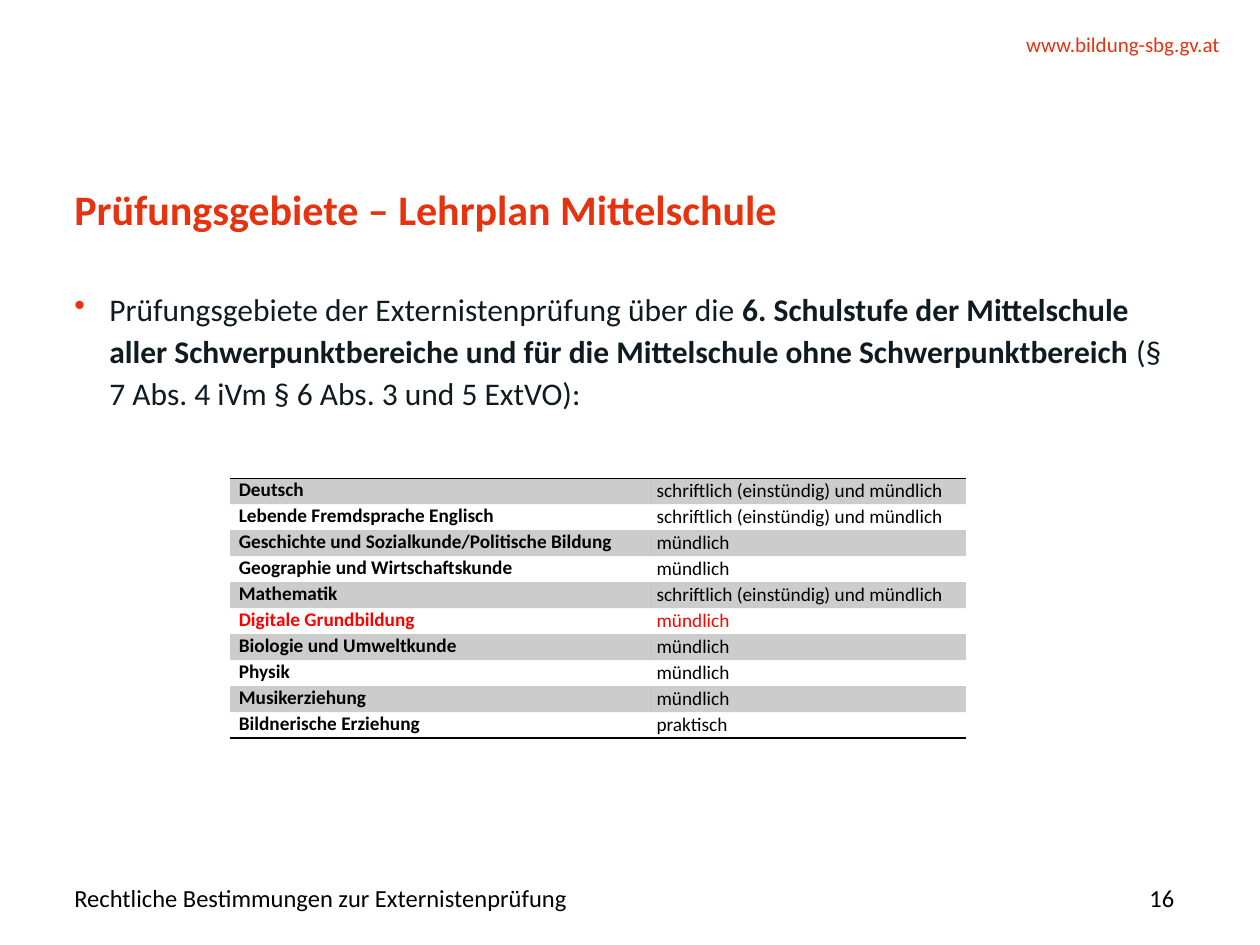
"""Build the slide listing the examination subjects of the Mittelschule curriculum."""
from dataclasses import dataclass
from typing import Any

import lxml.etree
import pptx
import pptx.dml.color
import pptx.enum.text
import pptx.oxml.ns
import pptx.util

Pt = pptx.util.Pt
Align = pptx.enum.text.PP_ALIGN
Anchor = pptx.enum.text.MSO_ANCHOR

COLOURS = {"accent": "E6320F", "body": "0F1B20", "black": "000000", "highlight": "FF0000"}
FONT = "Calibri"
LEFT = 42.5
CONTENT_WIDTH = 628.5
INDENT = 20
ROW_HEIGHT = 14.86
COLUMN_WIDTHS = (240.5, 180)
CELL_MARGINS = (
    {"margin_left": Pt(5), "margin_top": 0, "margin_right": Pt(5), "margin_bottom": 0},
    {"margin_left": Pt(3.2), "margin_top": Pt(0.72), "margin_right": Pt(0.72), "margin_bottom": Pt(0.72)},
)
NO_TABLE_STYLE = "{2D5ABB26-0587-4C30-8999-92F81FD0307C}"


@dataclass(frozen=True)
class Span:
    text: str
    bold: bool = False


@dataclass(frozen=True)
class TextBlock:
    spans: tuple[Span, ...]
    place: tuple[float, float, float, float]
    size: float
    colour: str
    align: Any = Align.LEFT
    anchor: Any = Anchor.TOP
    line_pitch: float | None = None
    space_after: float = 0
    bullet: bool = False


@dataclass(frozen=True)
class Subject:
    name: str
    mode: str
    colour: str = "black"


BOTH = "schriftlich (einstündig) und mündlich"
ORAL = "mündlich"

BLOCKS = (
    TextBlock((Span("www.bildung-sbg.gv.at"),), (523.5, 18, 173.5, 14.5), 12, "accent", Align.RIGHT),
    TextBlock((Span("Prüfungsgebiete – Lehrplan Mittelschule", True),),
              (LEFT, 103.7, CONTENT_WIDTH, 65.5), 24, "accent", line_pitch=30),
    TextBlock(
        (
            Span("Prüfungsgebiete der Externistenprüfung über die "),
            Span("6. Schulstufe der Mittelschule aller Schwerpunktbereiche und für die "
                 "Mittelschule ohne Schwerpunktbereich ", True),
            Span("(§ 7 Abs. 4 iVm § 6 Abs. 3 und 5 ExtVO):"),
        ),
        (LEFT, 163.4, CONTENT_WIDTH, 309), 18, "body", line_pitch=24, space_after=14.2, bullet=True),
    TextBlock((Span("Rechtliche Bestimmungen zur Externistenprüfung"),),
              (LEFT, 502.5, 541.5, 21), 14, "black", anchor=Anchor.MIDDLE),
    TextBlock((Span("16"),), (607, 502.5, 64, 21), 14, "black", Align.RIGHT, Anchor.MIDDLE),
)

SUBJECTS = (
    Subject("Deutsch", BOTH),
    Subject("Lebende Fremdsprache Englisch", BOTH),
    Subject("Geschichte und Sozialkunde/Politische Bildung", ORAL),
    Subject("Geographie und Wirtschaftskunde", ORAL),
    Subject("Mathematik", BOTH),
    Subject("Digitale Grundbildung", ORAL, "highlight"),
    Subject("Biologie und Umweltkunde", ORAL),
    Subject("Physik", ORAL),
    Subject("Musikerziehung", ORAL),
    Subject("Bildnerische Erziehung", "praktisch"),
)


def rgb(name: str) -> pptx.dml.color.RGBColor:
    """Return the named colour."""
    return pptx.dml.color.RGBColor.from_string(COLOURS[name])


def apply(target: Any, values: dict[str, Any]) -> None:
    """Set every format value on the target."""
    for name, value in values.items():
        setattr(target, name, value)


def add_element(parent: Any, tag: str, **attributes: str) -> Any:
    """Append a drawing element to the parent."""
    return lxml.etree.SubElement(parent, pptx.oxml.ns.qn(tag), attributes)


def add_span(para: Any, span: Span, size: float, colour: str) -> None:
    """Append a formatted run to the paragraph."""
    run = para.add_run()
    run.text = span.text
    apply(run.font, {"name": FONT, "size": Pt(size), "bold": span.bold})
    run.font.color.rgb = rgb(colour)


def add_bullet(para: Any) -> None:
    """Give the paragraph a coloured bullet with a hanging indent."""
    properties = para._p.get_or_add_pPr()
    properties.set("marL", str(Pt(INDENT)))
    properties.set("indent", str(-Pt(INDENT)))
    colour = add_element(properties, "a:buClr")
    add_element(colour, "a:srgbClr", val=COLOURS["accent"])
    add_element(properties, "a:buChar", char="•")


def add_text(page: Any, block: TextBlock) -> None:
    """Draw one block of text."""
    box = page.shapes.add_textbox(*map(Pt, block.place))
    frame = box.text_frame
    apply(frame, {"word_wrap": True, "vertical_anchor": block.anchor, "margin_left": 0,
                  "margin_top": 0, "margin_right": 0, "margin_bottom": 0})
    para = frame.paragraphs[0]
    if block.bullet:
        add_bullet(para)
    apply(para, {"alignment": block.align, "space_after": Pt(block.space_after)})
    if block.line_pitch:
        para.line_spacing = Pt(block.line_pitch)
    for span in block.spans:
        add_span(para, span, block.size, block.colour)


def shade(cell: Any) -> None:
    """Fill the cell with black at twenty per cent opacity."""
    cell.fill.solid()
    cell.fill.fore_color.rgb = rgb("black")
    colour = next(cell._tc.tcPr.iter(pptx.oxml.ns.qn("a:srgbClr")))
    add_element(colour, "a:alpha", val="20000")


def add_border(cell: Any, tag: str) -> None:
    """Draw a black rule on one side of the cell."""
    properties = cell._tc.get_or_add_tcPr()
    line = add_element(properties, tag, w=str(Pt(1)))
    add_element(add_element(line, "a:solidFill"), "a:srgbClr", val=COLOURS["black"])
    properties.insert(0, line)


def add_subject_table(page: Any, left: float, top: float) -> None:
    """Draw the table of subjects and examination modes."""
    count = len(SUBJECTS)
    frame = page.shapes.add_table(count, len(COLUMN_WIDTHS), Pt(left), Pt(top),
                                  Pt(sum(COLUMN_WIDTHS)), Pt(count * ROW_HEIGHT))
    table = frame.table
    apply(table, {"first_row": False, "horz_banding": False})
    table._tbl.tblPr.find(pptx.oxml.ns.qn("a:tableStyleId")).text = NO_TABLE_STYLE
    for column, width in zip(table.columns, COLUMN_WIDTHS):
        column.width = Pt(width)
    for index, (row, subject) in enumerate(zip(table.rows, SUBJECTS)):
        row.height = Pt(ROW_HEIGHT)
        spans = (Span(subject.name, True), Span(subject.mode))
        for cell, span, margins in zip(row.cells, spans, CELL_MARGINS):
            apply(cell, margins)
            add_span(cell.text_frame.paragraphs[0], span, 11, subject.colour)
            if index % 2 == 0:
                shade(cell)
            else:
                cell.fill.background()
            if index == 0:
                add_border(cell, "a:lnT")
            if index == count - 1:
                add_border(cell, "a:lnB")


def main() -> None:
    """Build and save the deck."""
    deck = pptx.Presentation()
    apply(deck, {"slide_width": Pt(720), "slide_height": Pt(540)})
    page = deck.slides.add_slide(deck.slide_layouts[6])
    for block in BLOCKS:
        add_text(page, block)
    add_subject_table(page, 131.5, 273.3)
    deck.save("out.pptx")


if __name__ == "__main__":
    main()
